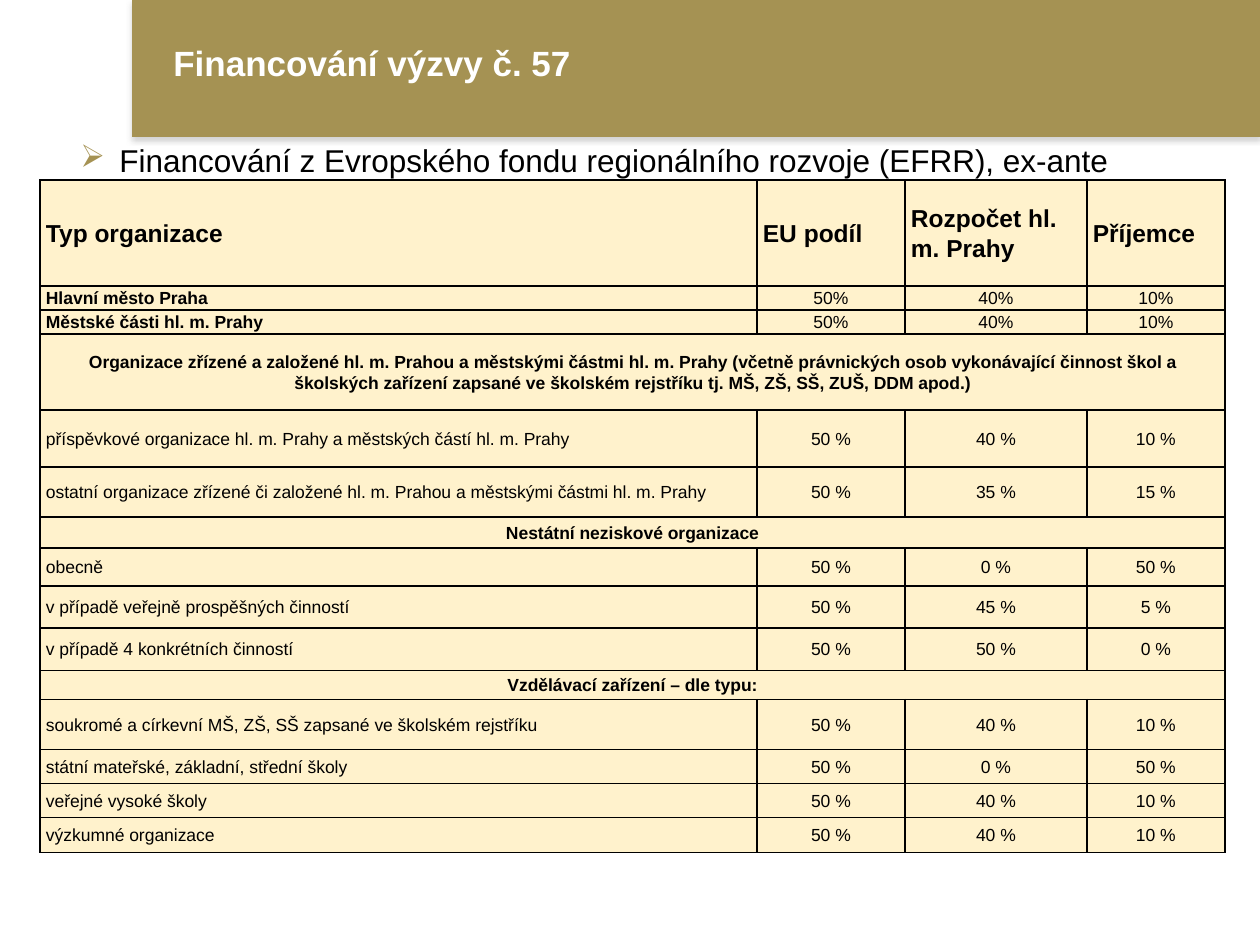
from lxml import etree
from pptx import Presentation
from pptx.dml.color import RGBColor
from pptx.enum.shapes import MSO_SHAPE
from pptx.enum.text import MSO_ANCHOR, PP_ALIGN as ALIGN
from pptx.oxml import parse_xml
from pptx.oxml.ns import nsdecls, qn
from pptx.util import Pt

COLORS = {"gold": "A59253", "cream": "FFF2CC", "black": "000000",
          "white": "FFFFFF", "shadow": "808080"}
NS = nsdecls("a")


def px(length):
    """Turn pixels (126 to the inch) into EMU."""
    return round(length * 914400 / 126)


def write(frame, text, size=10, color="black", bold=False, align=None,
          spacing=None, after=None, bullet=None):
    frame.word_wrap = True
    paragraph = frame.paragraphs[0]
    if bullet:
        props = paragraph._p.get_or_add_pPr()
        props.set("marL", str(px(39)))
        props.set("indent", str(-px(39)))
        props.append(parse_xml(f'<a:buClr {NS}><a:srgbClr val="{COLORS["gold"]}"/></a:buClr>'))
        props.append(parse_xml(f'<a:buChar {NS} char="{bullet}"/>'))
    paragraph.alignment = align
    paragraph.line_spacing = spacing
    paragraph.space_after = after
    run = paragraph.add_run()
    run.text = text
    run.font.name = "Arial"
    run.font.size = Pt(size)
    run.font.bold = bold
    run.font.color.rgb = RGBColor.from_string(COLORS[color])


prs = Presentation()
prs.slide_width, prs.slide_height = px(1260), px(945)
slide = prs.slides.add_slide(prs.slide_layouts[6])
shapes = slide.shapes

# Header band
band = shapes.add_shape(MSO_SHAPE.RECTANGLE, px(132), 0, px(1128), px(137))
band.fill.solid()
band.fill.fore_color.rgb = RGBColor.from_string(COLORS["gold"])
band.line.fill.background()
band.shadow.inherit = False
band_effects = band._element.spPr.find(qn("a:effectLst"))
band_effects.append(parse_xml(
    f'<a:outerShdw {NS} blurRad="{Pt(3.1)}" dist="{Pt(1.8)}" dir="5400000" rotWithShape="0">'
    f'<a:srgbClr val="{COLORS["shadow"]}"><a:alpha val="35000"/></a:srgbClr></a:outerShdw>'))

title = shapes.add_textbox(px(161), px(-26), px(1086), px(183)).text_frame
title.vertical_anchor = MSO_ANCHOR.MIDDLE
write(title, "Financování výzvy č. 57", size=20, color="white", bold=True, spacing=0.9)

funding = shapes.add_textbox(px(68), px(135), px(1125), px(165)).text_frame
write(funding, "Financování z Evropského fondu regionálního rozvoje (EFRR), ex-ante",
      size=18, bullet="➢")

# Shares by organisation: row height, then one text per column or one across all
ROWS = [
    (106, "Typ organizace", "EU podíl", "Rozpočet hl. m. Prahy", "Příjemce"),
    (24, "Hlavní město Praha", "50%", "40%", "10%"),
    (24, "Městské části hl. m. Prahy", "50%", "40%", "10%"),
    (76, "Organizace zřízené a založené hl. m. Prahou a městskými částmi hl. m. Prahy "
         "(včetně právnických osob vykonávající činnost škol a školských zařízení zapsané "
         "ve školském rejstříku tj. MŠ, ZŠ, SŠ, ZUŠ, DDM apod.)"),
    (57, "příspěvkové organizace hl. m. Prahy a městských částí hl. m. Prahy",
     "50 %", "40 %", "10 %"),
    (50, "ostatní organizace zřízené či založené hl. m. Prahou a městskými částmi hl. m. Prahy",
     "50 %", "35 %", "15 %"),
    (31, "Nestátní neziskové organizace"),
    (38, "obecně", "50 %", "0 %", "50 %"),
    (42, "v případě veřejně prospěšných činností", "50 %", "45 %", "5 %"),
    (43, "v případě 4 konkrétních činností", "50 %", "50 %", "0 %"),
    (29, "Vzdělávací zařízení – dle typu:"),
    (50, "soukromé a církevní MŠ, ZŠ, SŠ zapsané ve školském rejstříku",
     "50 %", "40 %", "10 %"),
    (34, "státní mateřské, základní, střední školy", "50 %", "0 %", "50 %"),
    (34, "veřejné vysoké školy", "50 %", "40 %", "10 %"),
    (35, "výzkumné organizace", "50 %", "40 %", "10 %"),
]
COLUMN_WIDTHS = [717, 148, 182, 138]
BOLD_LABEL_ROWS = {1, 2}

table = shapes.add_table(len(ROWS), len(COLUMN_WIDTHS), px(40), px(180),
                         px(sum(COLUMN_WIDTHS)), px(sum(row[0] for row in ROWS))).table
for column, width in zip(table.columns, COLUMN_WIDTHS):
    column.width = px(width)

for r, (height, *texts) in enumerate(ROWS):
    table.rows[r].height = px(height)
    is_header, is_section = r == 0, len(texts) == 1
    for c in range(len(COLUMN_WIDTHS)):
        cell = table.cell(r, c)
        cell.margin_left = cell.margin_right = px(6)
        cell.margin_top = cell.margin_bottom = 0
        cell.vertical_anchor = MSO_ANCHOR.MIDDLE
        cell_props = cell._tc.get_or_add_tcPr()
        for side in ("lnL", "lnR", "lnT", "lnB"):
            border = etree.SubElement(cell_props, qn(f"a:{side}"), w=str(Pt(1)))
            line_fill = etree.SubElement(border, qn("a:solidFill"))
            etree.SubElement(line_fill, qn("a:srgbClr"), val=COLORS["black"])
        cell.fill.solid()
        cell.fill.fore_color.rgb = RGBColor.from_string(COLORS["cream"])
    if is_section:
        table.cell(r, 0).merge(table.cell(r, len(COLUMN_WIDTHS) - 1))
    for c, text in enumerate(texts):
        if is_header:
            style = {"size": 14, "bold": True, "after": Pt(6)}
        elif is_section:
            style = {"bold": True, "align": ALIGN.CENTER}
        elif c == 0:
            style = {"bold": r in BOLD_LABEL_ROWS, "align": ALIGN.LEFT}
        else:
            style = {"align": ALIGN.CENTER}
        write(table.cell(r, c).text_frame, text, spacing=1.07, **style)

prs.save("out.pptx")
